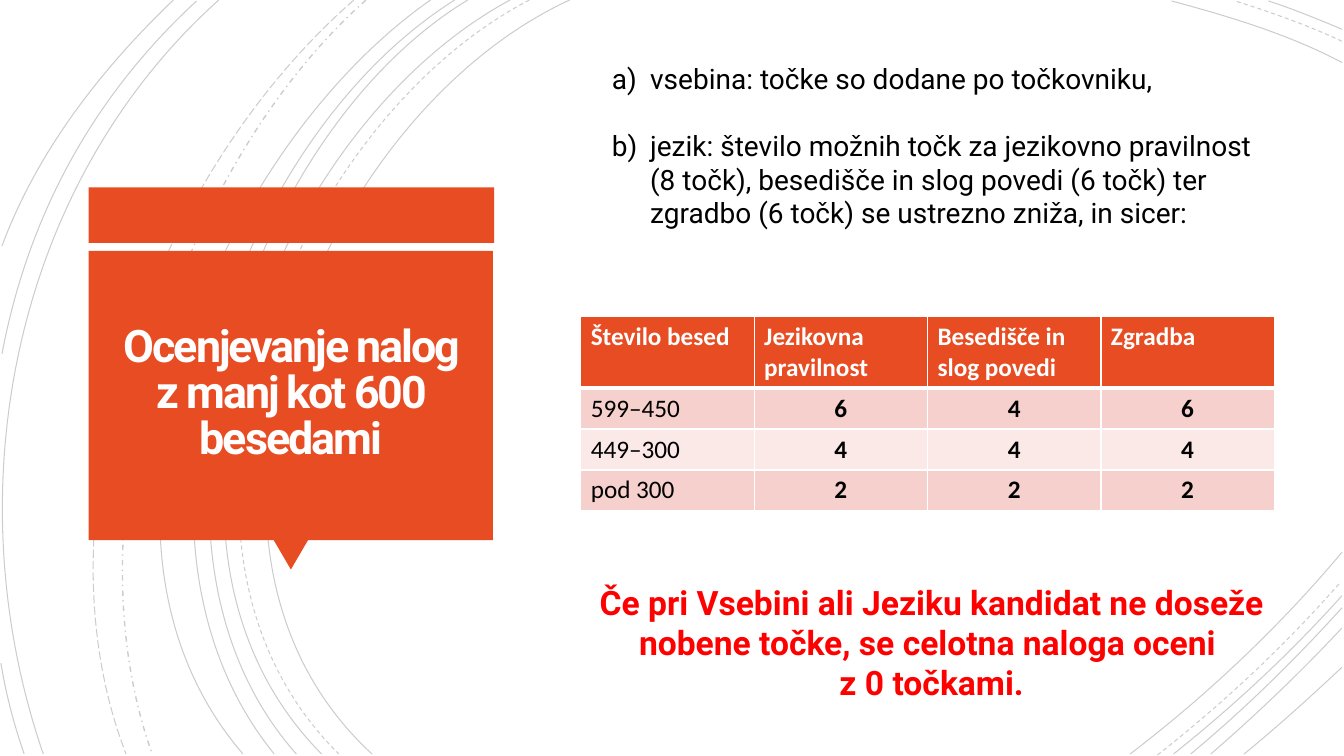
from lxml.etree import SubElement
from pptx import Presentation
from pptx.dml.color import RGBColor
from pptx.enum.dml import MSO_LINE
from pptx.enum.shapes import MSO_SHAPE
from pptx.enum.text import MSO_ANCHOR, MSO_AUTO_SIZE, PP_ALIGN
from pptx.oxml import parse_xml
from pptx.oxml.ns import nsdecls, qn
from pptx.util import Inches, Pt

SOLID, DASH = MSO_LINE.SOLID, MSO_LINE.DASH
DASH_DOT, LONG_DASH = MSO_LINE.DASH_DOT, MSO_LINE.LONG_DASH

ARCS = [
    ((5.65, 0), (3.15, 1.15), (1.43, 5.4), (3.69, 7.48), SOLID),
    ((13.31, 0.62), (12.78, 0.34), (12.18, 0.16), (11.62, 0.01), SOLID),
    ((11.21, 7.48), (11.97, 6.9), (12.69, 6.22), (13.31, 5.48), SOLID),
    ((5.25, 0), (2.85, 1.25), (1.23, 5.37), (3.36, 7.48), DASH),
    ((13.31, 0.41), (12.97, 0.25), (12.6, 0.12), (12.25, 0.01), DASH),
    ((11.48, 7.49), (12.13, 6.98), (12.75, 6.4), (13.3, 5.77), DASH),
    ((5.06, 0), (2.7, 1.27), (1.1, 5.37), (3.19, 7.48), SOLID),
    ((13.31, 0.29), (13.07, 0.19), (12.83, 0.09), (12.58, 0.01), SOLID),
    ((11.64, 7.48), (12.23, 7.01), (12.8, 6.48), (13.31, 5.91), SOLID),
    ((4.64, 0), (2.44, 1.33), (1.1, 5.41), (2.94, 7.48), SOLID),
    ((11.81, 7.48), (12.34, 7.04), (12.84, 6.55), (13.31, 6.03), SOLID),
    ((4.51, 0), (2.31, 1.38), (0.97, 5.33), (2.72, 7.48), SOLID),
    ((12.01, 7.48), (12.46, 7.09), (12.9, 6.67), (13.31, 6.23), SOLID),
    ((4.27, 0), (2.17, 1.47), (0.53, 5.29), (2.41, 7.48), SOLID),
    ((12.34, 7.48), (12.67, 7.21), (12.99, 6.92), (13.31, 6.62), SOLID),
    ((3.63, 0), (1.76, 1.66), (0.65, 5.09), (1.51, 7.48), DASH_DOT),
    ((3.51, 0), (1.57, 1.69), (0.29, 4.99), (1.25, 7.48), LONG_DASH),
    ((2.17, 0), (0.11, 1.85), (-0.46, 4.9), (0.43, 7.48), SOLID),
    ((1.95, 0.01), (0.92, 0.96), (0.28, 2.14), (0.02, 3.51), SOLID),
    ((0.01, 6.58), (0.06, 6.89), (0.14, 7.19), (0.24, 7.48), SOLID),
    ((1.72, 0), (1, 0.69), (0.37, 1.5), (0.02, 2.44), SOLID),
]

SCORES = [
    ["Število besed", "Jezikovna\npravilnost", "Besedišče in slog povedi", "Zgradba"],
    ["599–450", "6", "4", "6"],
    ["449–300", "4", "4", "4"],
    ["pod 300", "2", "2", "2"],
]


def color(value):
    return RGBColor.from_string(value)


def write(frame, text, size=18, font="Roboto", ink="000000", bold=False, align=None,
          numbered=False, gap=0, line_spacing=None, tracking=None):
    for index, line in enumerate(text.split("\n")):
        paragraph = frame.paragraphs[0] if index == 0 else frame.add_paragraph()
        if numbered:
            properties = paragraph._p.get_or_add_pPr()
            properties.set("marL", str(Inches(0.38)))
            properties.set("indent", str(-Inches(0.38)))
            SubElement(properties, qn("a:buAutoNum"), type="alphaLcParenR")
        paragraph.alignment = align
        paragraph.line_spacing = line_spacing
        if index and gap:
            paragraph.space_before = Pt(gap)
        run = paragraph.add_run()
        run.text = line
        run.font.name = font
        run.font.size = Pt(size)
        run.font.bold = bold
        run.font.color.rgb = color(ink)
        if tracking is not None:
            run._r.get_or_add_rPr().set("spc", str(int(tracking * 100)))


class GradingSlide:
    accent = "E84C22"
    light = "FFFFFF"
    bands = ("F6D0CD", "FBE9E8")

    def __init__(self, presentation):
        self.slide = presentation.slides.add_slide(presentation.slide_layouts[5])
        self.shapes = self.slide.shapes
        self.slide.background.fill.solid()
        self.slide.background.fill.fore_color.rgb = color(self.light)

    def arc(self, *points, dash):
        start, *bends = [(Inches(x), Inches(y)) for x, y in points]
        builder = self.shapes.build_freeform(*start)
        builder.add_line_segments(bends, close=False)
        shape = builder.convert_to_shape()
        outline = shape._element.find(".//" + qn("a:path"))
        curve = SubElement(outline, qn("a:cubicBezTo"))
        for segment in outline.findall(qn("a:lnTo")):
            curve.append(segment[0])
            outline.remove(segment)
        shape.shadow.inherit = False
        shape.fill.background()
        shape.line.color.rgb = color("000000")
        shape.line.width = Pt(1 if dash == DASH_DOT else 0.75)
        shape.line.dash_style = dash
        tone = shape.line._ln.find(".//" + qn("a:srgbClr"))
        SubElement(tone, qn("a:alpha"), val="20000")

    def block(self, kind, left, top, width, height, rotation=0):
        shape = self.shapes.add_shape(
            kind, Inches(left), Inches(top), Inches(width), Inches(height))
        shape.rotation = rotation
        shape.shadow.inherit = False
        shape.fill.solid()
        shape.fill.fore_color.rgb = color(self.accent)
        shape.line.fill.background()

    def title(self, text, left, top, width, height):
        shape = self.shapes.title
        self.shapes._spTree.append(shape._element)
        shape.left, shape.top = Inches(left), Inches(top)
        shape.width, shape.height = Inches(width), Inches(height)
        frame = shape.text_frame
        frame.margin_left = frame.margin_right = Inches(0.25)
        frame.margin_top = frame.margin_bottom = Inches(0.25)
        frame.vertical_anchor = MSO_ANCHOR.MIDDLE
        frame.auto_size = MSO_AUTO_SIZE.NONE
        frame.word_wrap = True
        write(frame, text, size=32, ink="FFFEFF", bold=True, align=PP_ALIGN.CENTER,
              line_spacing=0.85, tracking=-1.5)

    def text(self, text, left, top, width, height, **style):
        box = self.shapes.add_textbox(
            Inches(left), Inches(top), Inches(width), Inches(height))
        box.text_frame.word_wrap = True
        write(box.text_frame, text, **style)

    def border(self, cell, row):
        properties = cell._tc.get_or_add_tcPr()
        widths = {"L": 1, "R": 1, "T": 3 if row == 1 else 1, "B": 3 if row == 0 else 1}
        for position, (side, width) in enumerate(widths.items()):
            properties.insert(position, parse_xml(
                f'<a:ln{side} {nsdecls("a")} w="{Pt(width)}"><a:solidFill>'
                f'<a:srgbClr val="{self.light}"/></a:solidFill></a:ln{side}>'))

    def table(self, rows, left, top, column_width, header_height, row_height):
        columns = len(rows[0])
        height = header_height + row_height * (len(rows) - 1)
        table = self.shapes.add_table(
            len(rows), columns, Inches(left), Inches(top),
            Inches(column_width * columns), Inches(height)).table
        for column in table.columns:
            column.width = Inches(column_width)
        for row, values in enumerate(rows):
            header = row == 0
            table.rows[row].height = Inches(header_height if header else row_height)
            for column, value in enumerate(values):
                cell = table.cell(row, column)
                cell.fill.solid()
                cell.fill.fore_color.rgb = color(
                    self.accent if header else self.bands[(row - 1) % 2])
                self.border(cell, row)
                score = not header and column > 0
                write(cell.text_frame, value, font="Calibri", bold=header or score,
                      ink=self.light if header else "000000",
                      align=PP_ALIGN.CENTER if score else None)


def main():
    presentation = Presentation()
    presentation.slide_width, presentation.slide_height = Inches(13.33), Inches(7.5)
    grading = GradingSlide(presentation)
    for *points, dash in ARCS:
        grading.arc(*points, dash=dash)
    grading.block(MSO_SHAPE.RECTANGLE, 0.88, 1.86, 4.02, 0.55)
    grading.block(MSO_SHAPE.ISOSCELES_TRIANGLE, 2.71, 5.35, 0.35, 0.3, rotation=180)
    grading.block(MSO_SHAPE.RECTANGLE, 0.88, 2.49, 4.01, 2.87)
    grading.title("Ocenjevanje nalog z manj kot 600 besedami", 0.97, 2.57, 3.83, 2.69)
    grading.table(SCORES, 5.76, 3.14, 1.72, 0.69, 0.4)
    grading.text(
        "vsebina: točke so dodane po točkovniku,\n"
        "jezik: število možnih točk za jezikovno pravilnost (8 točk), besedišče in slog "
        "povedi (6 točk) ter zgradbo (6 točk) se ustrezno zniža, in sicer:",
        5.97, 0.56, 6.66, 2.12, size=20, numbered=True, gap=24)
    grading.text(
        "Če pri Vsebini ali Jeziku kandidat ne doseže nobene točke, se celotna naloga "
        "oceni \nz 0 točkami.",
        5.44, 5.72, 7.6, 1.31, size=24, ink="FF0000", bold=True, align=PP_ALIGN.CENTER)
    presentation.save("out.pptx")


if __name__ == "__main__":
    main()
